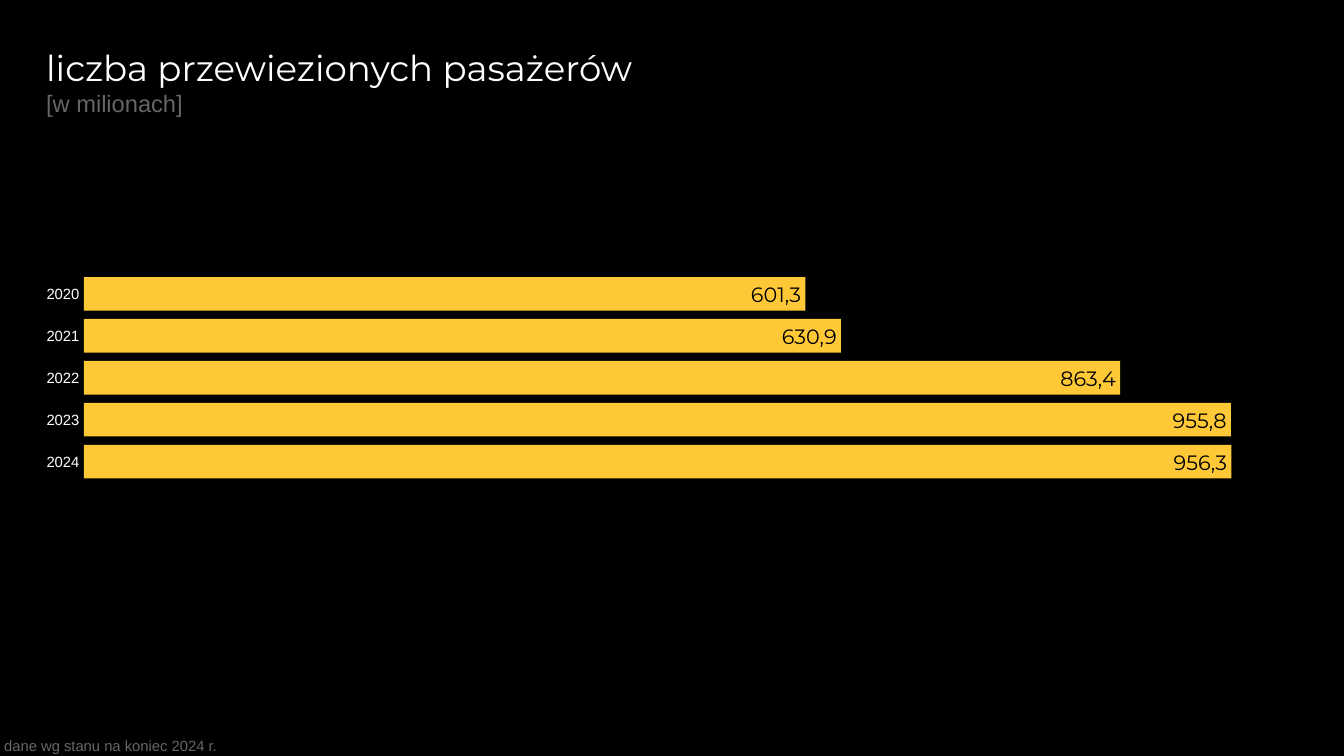
from dataclasses import dataclass

from pptx import Presentation
from pptx.dml.color import RGBColor as Color
from pptx.enum.shapes import MSO_SHAPE as Shape
from pptx.enum.text import MSO_ANCHOR as Anchor
from pptx.enum.text import MSO_AUTO_SIZE as AutoSize
from pptx.enum.text import PP_ALIGN as Align
from pptx.util import Pt


@dataclass(frozen=True)
class TextStyle:
    font: str
    size: int
    color: Color


@dataclass(frozen=True)
class Theme:
    background: Color = Color(0x00, 0x00, 0x00)
    bar: Color = Color(0xFF, 0xC8, 0x37)
    title: TextStyle = TextStyle("Montserrat", 24, Color(0xFF, 0xFF, 0xFF))
    unit: TextStyle = TextStyle("Arial", 16, Color(0x66, 0x66, 0x66))
    value: TextStyle = TextStyle("Montserrat", 14, Color(0x00, 0x00, 0x00))
    year: TextStyle = TextStyle("Arial", 10, Color(0xFF, 0xFF, 0xFF))
    footnote: TextStyle = TextStyle("Arial", 10, Color(0x66, 0x66, 0x66))


THEME = Theme()
WIDTH, HEIGHT = 907.2, 510.5
UNIT = 28.35  # margin, row height and width of the year column
INSET = 2.83
ROWS_TOP = 184.25
BAR_HEIGHT = 22.68
POINTS_PER_MILLION = 0.81
FOOTNOTE_HEIGHT = 14.17

PASSENGERS = {"2020": 601.3, "2021": 630.9, "2022": 863.4, "2023": 955.8, "2024": 956.3}


def fill_text(box, lines, align=Align.LEFT, anchor=Anchor.MIDDLE):
    """Write lines of (text, style) into a box, one paragraph each."""
    frame = box.text_frame
    frame.auto_size = AutoSize.NONE
    frame.word_wrap = False
    frame.vertical_anchor = anchor
    frame.margin_left = frame.margin_right = Pt(INSET)
    frame.margin_top = frame.margin_bottom = Pt(INSET)
    frame.text = "\n".join(text for text, _ in lines)
    for para, (_, style) in zip(frame.paragraphs, lines):
        para.alignment = align
        para.font.name = style.font
        para.font.size = Pt(style.size)
        para.font.color.rgb = style.color


def add_title(page, lines):
    box = page.shapes.title
    box.left, box.top, box.width, box.height = Pt(UNIT), Pt(UNIT), Pt(600), Pt(2 * UNIT)
    fill_text(box, lines, anchor=Anchor.TOP)


def add_label(page, place, text, style, align=Align.LEFT):
    box = page.shapes.add_textbox(*map(Pt, place))
    fill_text(box, [(text, style)], align)


def add_bar(page, place, text):
    bar = page.shapes.add_shape(Shape.RECTANGLE, *map(Pt, place))
    bar.shadow.inherit = False
    bar.fill.solid()
    bar.fill.fore_color.rgb = THEME.bar
    bar.line.fill.background()
    fill_text(bar, [(text, THEME.value)], Align.RIGHT)


def add_year_row(page, top, year, millions):
    """Add a year and its bar, centred in one row and drawn to scale."""
    add_label(page, (UNIT, top, UNIT, UNIT), year, THEME.year, Align.CENTER)
    bar_top = top + (UNIT - BAR_HEIGHT) / 2
    add_bar(page, (2 * UNIT, bar_top, millions * POINTS_PER_MILLION, BAR_HEIGHT),
            f"{millions:.1f}".replace(".", ","))


def main():
    deck = Presentation()
    deck.slide_width, deck.slide_height = Pt(WIDTH), Pt(HEIGHT)
    page = deck.slides.add_slide(deck.slide_layouts[5])
    page.background.fill.solid()
    page.background.fill.fore_color.rgb = THEME.background

    # Title with its unit
    add_title(page, [
        ("liczba przewiezionych pasażerów", THEME.title),
        ("[w milionach]", THEME.unit),
    ])

    # Passengers per year
    for row, (year, millions) in enumerate(PASSENGERS.items()):
        add_year_row(page, ROWS_TOP + row * UNIT, year, millions)

    # Footnote
    add_label(page, (0, HEIGHT - FOOTNOTE_HEIGHT, 200, FOOTNOTE_HEIGHT),
              "dane wg stanu na koniec 2024 r.", THEME.footnote)

    deck.save("out.pptx")


if __name__ == "__main__":
    main()
